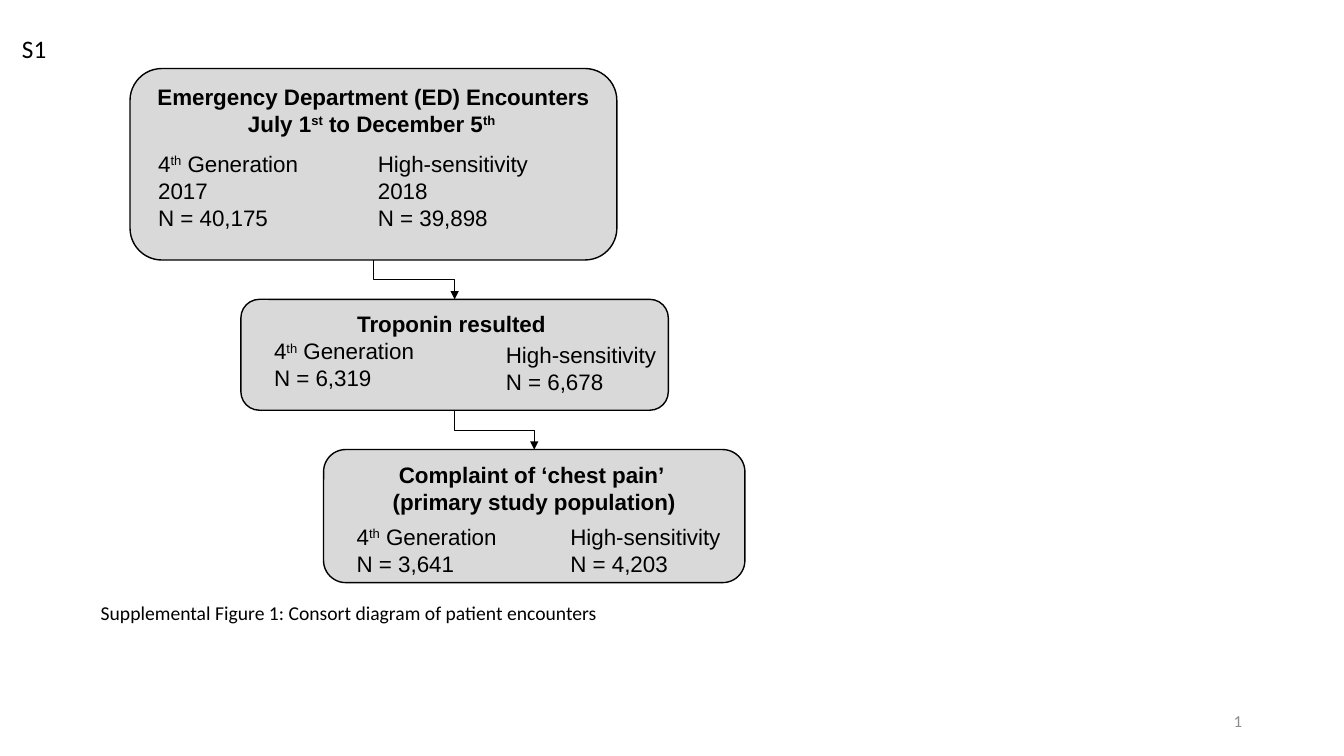
from dataclasses import dataclass

import lxml.etree
import pptx
import pptx.dml.color
import pptx.enum.shapes
import pptx.enum.text
import pptx.oxml.ns
import pptx.util

# The grid has square cells, ten to the inch.
CELLS_PER_INCH = 10
COLUMNS, ROWS = 133.33, 75
BLACK, GREY, BOX_FILL = "000000", "8C8C8C", "D9D9D9"
GROUP_COLUMNS = 19.1
LINE_ROWS = 2.7
TEXT_INSET_ROWS = 1

ALIGN = pptx.enum.text.PP_ALIGN
qn = pptx.oxml.ns.qn


@dataclass(frozen=True)
class Area:
    column: float
    row: float
    columns: float
    rows: float

    def lengths(self) -> tuple:
        return tuple(map(cells, (self.column, self.row, self.columns, self.rows)))


@dataclass(frozen=True)
class Style:
    size: float = 16
    font: str = "Arial"
    color: str = BLACK
    bold: bool = False
    align: ALIGN = ALIGN.LEFT


@dataclass(frozen=True)
class Group:
    column: float
    row: float
    lines: tuple[str, ...]


@dataclass(frozen=True)
class Stage:
    area: Area
    heading: tuple[str, ...]
    groups: tuple[Group, ...]


HEADING = Style(bold=True, align=ALIGN.CENTER)
FOURTH, HIGH = "4^th^ Generation", "High-sensitivity"

# Carets enclose superscripts.
STAGES = (
    Stage(Area(12.9, 6.8, 48.3, 19),
          ("Emergency Department (ED) Encounters", "July 1^st^ to December 5^th ^"),
          (Group(14.7, 14.4, (FOURTH, "2017", "N = 40,175")),
           Group(36.5, 14.4, (HIGH, "2018", "N = 39,898")))),
    Stage(Area(23.9, 29.7, 42.4, 11),
          ("Troponin resulted ",),
          (Group(26.2, 33, (FOURTH, "N = 6,319")),
           Group(49.2, 33.4, (HIGH, "N = 6,678")))),
    Stage(Area(32.1, 44.6, 41.8, 13.2),
          ("Complaint of ‘chest pain’ ", "(primary study population)"),
          (Group(34.4, 51.4, (FOURTH, "N = 3,641")),
           Group(55.6, 51.4, (HIGH, "N = 4,203")))),
)


def cells(count: float) -> pptx.util.Length:
    return pptx.util.Inches(count / CELLS_PER_INCH)


def rgb(color: str) -> pptx.dml.color.RGBColor:
    return pptx.dml.color.RGBColor.from_string(color)


def format_font(font, style: Style) -> None:
    font.size = pptx.util.Pt(style.size)
    font.name = style.font
    font.bold = style.bold
    font.color.rgb = rgb(style.color)


def write(frame, lines: tuple[str, ...], style: Style) -> None:
    """Fill a text frame, raising every part between carets."""
    frame.word_wrap = True
    for index, line in enumerate(lines):
        paragraph = frame.add_paragraph() if index else frame.paragraphs[0]
        paragraph.alignment = style.align
        for part, text in enumerate(line.split("^")):
            if not text:
                continue
            run = paragraph.add_run()
            run.text = text
            format_font(run.font, style)
            if part % 2:
                run._r.get_or_add_rPr().set("baseline", "30000")


def add_text(slide, area: Area, lines: tuple[str, ...], style: Style):
    box = slide.shapes.add_textbox(*area.lengths())
    write(box.text_frame, lines, style)
    return box


def add_stage_box(slide, stage: Stage):
    box = slide.shapes.add_shape(
        pptx.enum.shapes.MSO_SHAPE.ROUNDED_RECTANGLE, *stage.area.lengths())
    box.shadow.inherit = False
    box.fill.solid()
    box.fill.fore_color.rgb = rgb(BOX_FILL)
    box.line.color.rgb = rgb(BLACK)
    box.line.width = pptx.util.Pt(1)
    box.text_frame.vertical_anchor = pptx.enum.text.MSO_ANCHOR.TOP
    write(box.text_frame, stage.heading, HEADING)
    return box


def add_arrow(slide, upper, lower) -> None:
    """Join two boxes by an elbow that leaves downwards and arrives downwards."""
    start_x, start_y = upper.left + upper.width // 2, upper.top + upper.height
    end_x, end_y = lower.left + lower.width // 2, lower.top
    arrow = slide.shapes.add_connector(
        pptx.enum.shapes.MSO_CONNECTOR.ELBOW, start_x, start_y, end_x, end_y)
    arrow.begin_connect(upper, 2)
    arrow.end_connect(lower, 0)

    # A quarter turn swaps width and height around the same centre.
    across, down = end_x - start_x, end_y - start_y
    arrow.left = (start_x + end_x - down) // 2
    arrow.top = (start_y + end_y - across) // 2
    arrow.width, arrow.height = down, across
    properties = arrow._element.spPr
    turn = properties.find(qn("a:xfrm"))
    turn.set("rot", "16200000")
    turn.set("flipH", "1")

    arrow.line.color.rgb = rgb(BLACK)
    arrow.line.width = pptx.util.Pt(0.5)
    line = properties.find(qn("a:ln"))
    lxml.etree.SubElement(line, qn("a:tailEnd"), type="triangle")
    lxml.etree.SubElement(properties, qn("a:effectLst"))


def main() -> None:
    deck = pptx.Presentation()
    deck.slide_width, deck.slide_height = cells(COLUMNS), cells(ROWS)
    slide = deck.slides.add_slide(deck.slide_layouts.get_by_name("Blank"))

    add_text(slide, Area(1.2, 2.8, 11, 4), ("S1",), Style(18, "Calibri"))

    boxes = [add_stage_box(slide, stage) for stage in STAGES]
    for upper, lower in zip(boxes, boxes[1:]):
        add_arrow(slide, upper, lower)
    for stage in STAGES:
        for group in stage.groups:
            rows = LINE_ROWS * len(group.lines) + TEXT_INSET_ROWS
            add_text(slide, Area(group.column, group.row, GROUP_COLUMNS, rows),
                     group.lines, Style())

    add_text(slide, Area(9, 59.1, 72.5, 8.1),
             ("Supplemental Figure 1: Consort diagram of patient encounters",),
             Style(14, "Calibri"))
    number = add_text(slide, Area(94.2, 69.5, 30, 4), ("1",),
                      Style(12, "Calibri", GREY, align=ALIGN.RIGHT))
    number.text_frame.vertical_anchor = pptx.enum.text.MSO_ANCHOR.MIDDLE

    deck.save("out.pptx")


if __name__ == "__main__":
    main()
